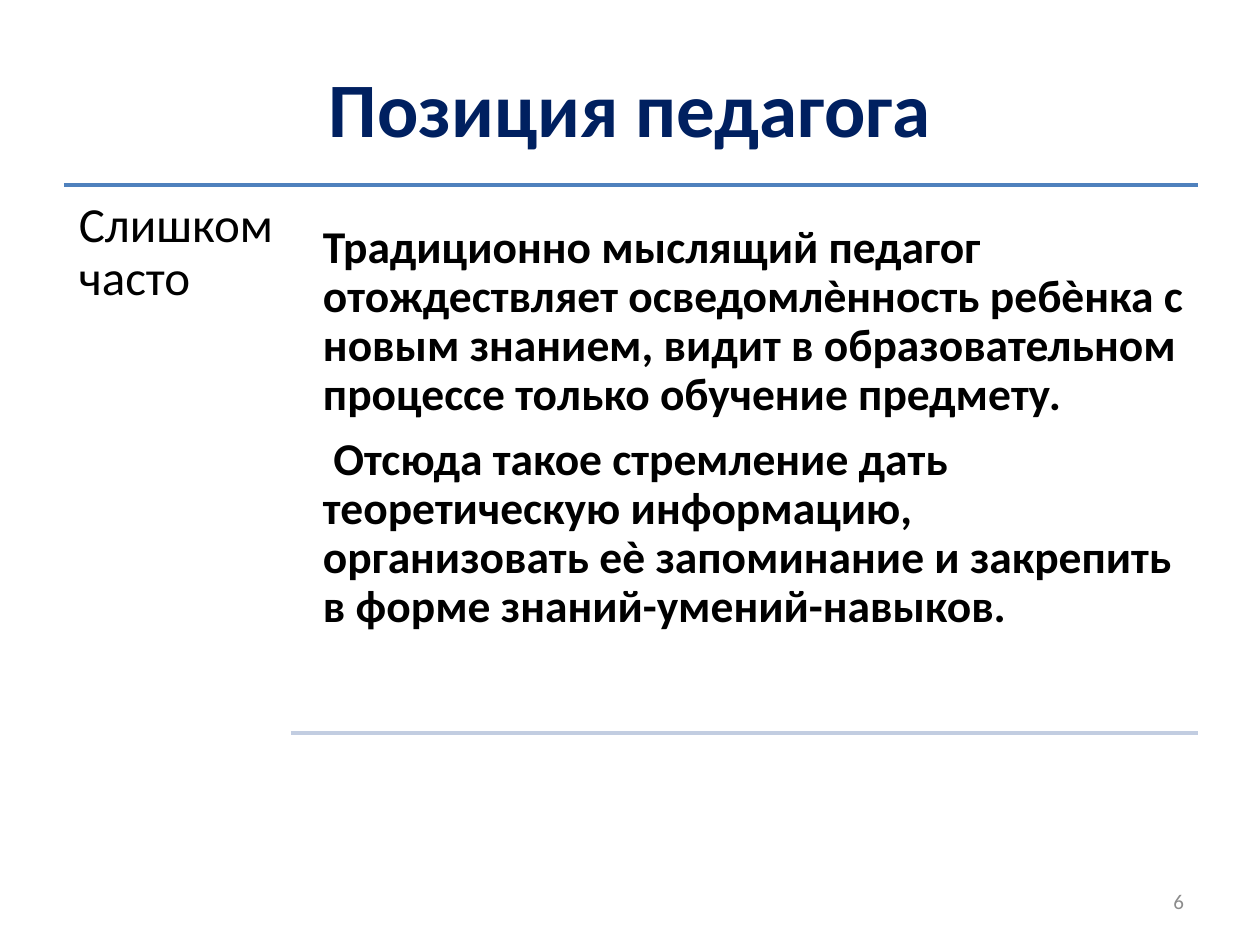
from dataclasses import dataclass

from lxml import etree
from pptx import Presentation
from pptx.dml.color import RGBColor
from pptx.enum.shapes import MSO_CONNECTOR
from pptx.enum.text import MSO_ANCHOR, PP_ALIGN
from pptx.oxml.ns import qn
from pptx.util import Emu, Pt

STRAIGHT = MSO_CONNECTOR.STRAIGHT
TOP, MIDDLE = MSO_ANCHOR.TOP, MSO_ANCHOR.MIDDLE
LEFT, CENTER, RIGHT = PP_ALIGN.LEFT, PP_ALIGN.CENTER, PP_ALIGN.RIGHT

EMU_PER_PX = 914400 / 126
FONT = "Calibri"
COLORS = {
    "title": "002060",
    "text": "000000",
    "number": "8C8C8C",
    "header_rule": "4F81BD",
    "bottom_rule": "C2CDE1",
}
BODY_SPACING = {"line_spacing": 0.9, "space_after": Pt(9.1)}


@dataclass
class Rule:
    left: int
    right: int
    y: int
    color: str


@dataclass
class Block:
    box: tuple[int, int, int, int]
    paragraphs: list[str]
    size: int
    color: str
    bold: bool
    align: PP_ALIGN
    anchor: MSO_ANCHOR
    inset_x: int
    inset_y: int
    spacing: dict


TITLE = Block((63, 38, 1134, 137), ["Позиция педагога"], 44, "title", True,
              CENTER, MIDDLE, 13, 6, {})
TEXTS = [
    Block((64, 185, 227, 575), ["Слишком часто"], 28, "text", False,
          LEFT, TOP, 15, 15, BODY_SPACING),
    Block((309, 210, 891, 523), [
        "Традиционно мыслящий педагог отождествляет осведомлѐнность ребѐнка "
        "с новым знанием, видит в образовательном процессе только обучение "
        "предмету.",
        " Отсюда такое стремление дать теоретическую информацию, "
        "организовать еѐ запоминание и закрепить в форме "
        "знаний-умений-навыков.",
    ], 26, "text", True, LEFT, TOP, 14, 14, BODY_SPACING),
    Block((903, 876, 294, 50), ["6"], 12, "number", False,
          RIGHT, MIDDLE, 13, 6, {}),
]
RULES = [
    Rule(64, 1198, 185, "header_rule"),
    Rule(291, 1198, 733, "bottom_rule"),
]


def px(n: int) -> Emu:
    return Emu(round(n * EMU_PER_PX))


def rgb(name: str) -> RGBColor:
    return RGBColor.from_string(COLORS[name])


def apply(obj, values: dict) -> None:
    for name, value in values.items():
        setattr(obj, name, value)


def fill_text(sp, block: Block) -> None:
    left, top, width, height = map(px, block.box)
    apply(sp, {"left": left, "top": top, "width": width, "height": height})
    tf = sp.text_frame
    x, y = px(block.inset_x), px(block.inset_y)
    apply(tf, {"word_wrap": True, "vertical_anchor": block.anchor,
               "margin_left": x, "margin_right": x,
               "margin_top": y, "margin_bottom": y})
    for i, text in enumerate(block.paragraphs):
        p = tf.add_paragraph() if i else tf.paragraphs[0]
        apply(p, {"alignment": block.align, **block.spacing})
        r = p.add_run()
        r.text = text
        apply(r.font, {"name": FONT, "size": Pt(block.size),
                       "bold": block.bold})
        r.font.color.rgb = rgb(block.color)


def draw_rule(s, rule: Rule) -> None:
    y = px(rule.y)
    line = s.shapes.add_connector(STRAIGHT, px(rule.left), y,
                                  px(rule.right), y)
    line.line.color.rgb = rgb(rule.color)
    line.line.width = Pt(2)
    etree.SubElement(line._element.spPr, qn("a:effectLst"))


def main() -> None:
    prs = Presentation()
    apply(prs, {"slide_width": px(1260), "slide_height": px(945)})
    s = prs.slides.add_slide(prs.slide_layouts[5])
    fill_text(s.shapes.title, TITLE)
    for rule in RULES:
        draw_rule(s, rule)
    for block in TEXTS:
        fill_text(s.shapes.add_textbox(*map(px, block.box)), block)
    prs.save("out.pptx")


if __name__ == "__main__":
    main()
